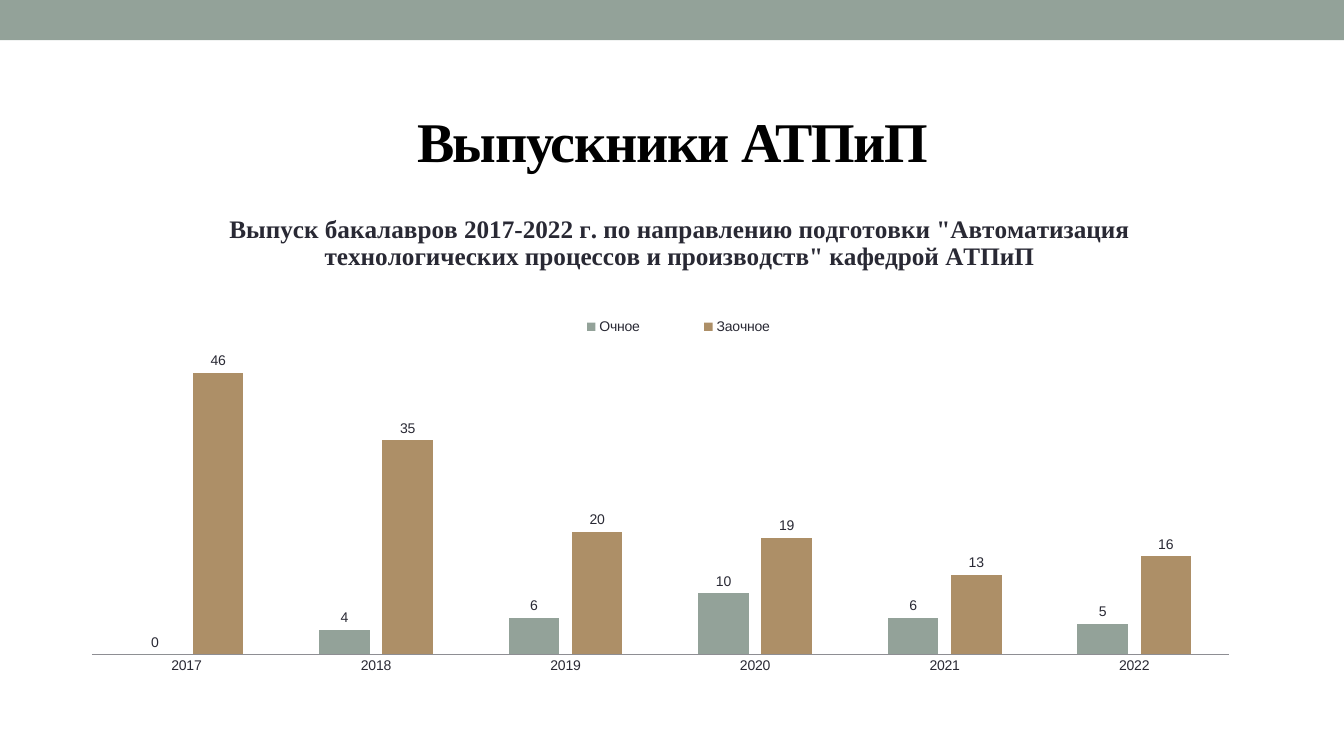
import pptx
import pptx.chart.data
import pptx.dml.color
import pptx.enum.chart
import pptx.enum.shapes
import pptx.enum.text
import pptx.oxml
import pptx.oxml.ns
import pptx.util

WIDTH, HEIGHT = 13.33, 7.5
TITLE = "Выпускники АТПиП"
CHART_TITLE = ('Выпуск бакалавров 2017-2022 г. по направлению подготовки "Автоматизация '
               'технологических процессов и производств" кафедрой АТПиП')
YEARS = ["2017", "2018", "2019", "2020", "2021", "2022"]
GRADUATES = [
    ("Очное", "93A299", [0, 4, 6, 10, 6, 5]),
    ("Заочное", "AD8F67", [46, 35, 20, 19, 13, 16]),
]
BAND_BOX = (0, 0, WIDTH, 0.4)
TITLE_BOX = (0.67, 0.81, 12, 1.16)
CHART_BOX = (0.67, 1.75, 12, 5.33)
CHART_LAYOUTS = [
    ("title", 1, (0.13, 0.06), ""),
    ("legend", 1, (0.38, 0.25, 0.25, 0.06), ""),
    ("plotArea", 0, (0.02, 0.32, 0.94, 0.57), '<c:layoutTarget val="inner"/>'),
]
TITLE_FONT = {"name": "Times New Roman", "size": 40, "bold": True, "color": "000000"}
CHART_TITLE_FONT = {"name": "Times New Roman", "size": 18, "bold": True, "color": "292934"}
CHART_FONT = {"name": "Arial", "size": 10, "color": "292934"}


def color(value):
    return pptx.dml.color.RGBColor.from_string(value)


def inches(box):
    return [pptx.util.Inches(length) for length in box]


def format_font(font, values):
    for name, value in values.items():
        if name == "color":
            font.color.rgb = color(value)
        else:
            setattr(font, name, pptx.util.Pt(value) if name == "size" else value)


def fill(target, value):
    target.fill.solid()
    target.fill.fore_color.rgb = color(value)


def place(element, index, shares, target):
    for layout in element.xpath("./c:layout"):
        element.remove(layout)
    modes = "".join(f'<c:{axis}Mode val="edge"/>' for axis in "xy")
    sizes = "".join(f'<c:{name} val="{share}"/>' for name, share in zip("xywh", shares))
    element.insert(index, pptx.oxml.parse_xml(
        f'<c:layout {pptx.oxml.ns.nsdecls("c")}><c:manualLayout>{target}{modes}{sizes}'
        '</c:manualLayout></c:layout>'))


def add_band(slide):
    band = slide.shapes.add_shape(pptx.enum.shapes.MSO_SHAPE.RECTANGLE, *inches(BAND_BOX))
    band.shadow.inherit = False
    fill(band, "93A299")
    band.line.fill.background()


def add_title(slide):
    title = slide.shapes.title
    title.left, title.top, title.width, title.height = inches(TITLE_BOX)
    title.text_frame.vertical_anchor = pptx.enum.text.MSO_ANCHOR.MIDDLE
    paragraph = title.text_frame.paragraphs[0]
    paragraph.alignment = pptx.enum.text.PP_ALIGN.CENTER
    run = paragraph.add_run()
    run.text = TITLE
    format_font(run.font, TITLE_FONT)
    run._r.get_or_add_rPr().set("spc", "-100")


def add_graduates_chart(slide):
    data = pptx.chart.data.CategoryChartData()
    data.categories = YEARS
    for name, _, values in GRADUATES:
        data.add_series(name, values)
    chart = slide.shapes.add_chart(
        pptx.enum.chart.XL_CHART_TYPE.COLUMN_CLUSTERED, *inches(CHART_BOX), data).chart
    format_font(chart.font, CHART_FONT)

    run = chart.chart_title.text_frame.paragraphs[0].add_run()
    run.text = CHART_TITLE
    format_font(run.font, CHART_TITLE_FONT)

    chart.has_legend = True
    chart.legend.position = pptx.enum.chart.XL_LEGEND_POSITION.TOP
    chart.legend.include_in_layout = False
    for name, index, shares, target in CHART_LAYOUTS:
        place(chart._chartSpace.xpath(f"./c:chart/c:{name}")[0], index, shares, target)

    plot = chart.plots[0]
    plot.vary_by_categories = False
    plot.gap_width, plot.overlap = 150, -25
    for series, (_, series_color, _) in zip(plot.series, GRADUATES):
        fill(series.format, series_color)
        series.invert_if_negative = False
        labels = series.data_labels
        labels.show_value = True
        labels.position = pptx.enum.chart.XL_LABEL_POSITION.OUTSIDE_END
        format_font(labels.font, CHART_FONT)

    years, counts = chart.category_axis, chart.value_axis
    years.major_tick_mark = pptx.enum.chart.XL_TICK_MARK.NONE
    years.format.line.color.rgb = color("8E8E93")
    years.format.line.width = pptx.util.Pt(0.75)
    counts.minimum_scale, counts.maximum_scale = 0, 50
    counts.has_major_gridlines = False
    counts.visible = False


def main():
    presentation = pptx.Presentation()
    presentation.slide_width, presentation.slide_height = inches((WIDTH, HEIGHT))
    slide = presentation.slides.add_slide(presentation.slide_layouts[5])
    add_band(slide)
    add_title(slide)
    add_graduates_chart(slide)
    presentation.save("out.pptx")


if __name__ == "__main__":
    main()
